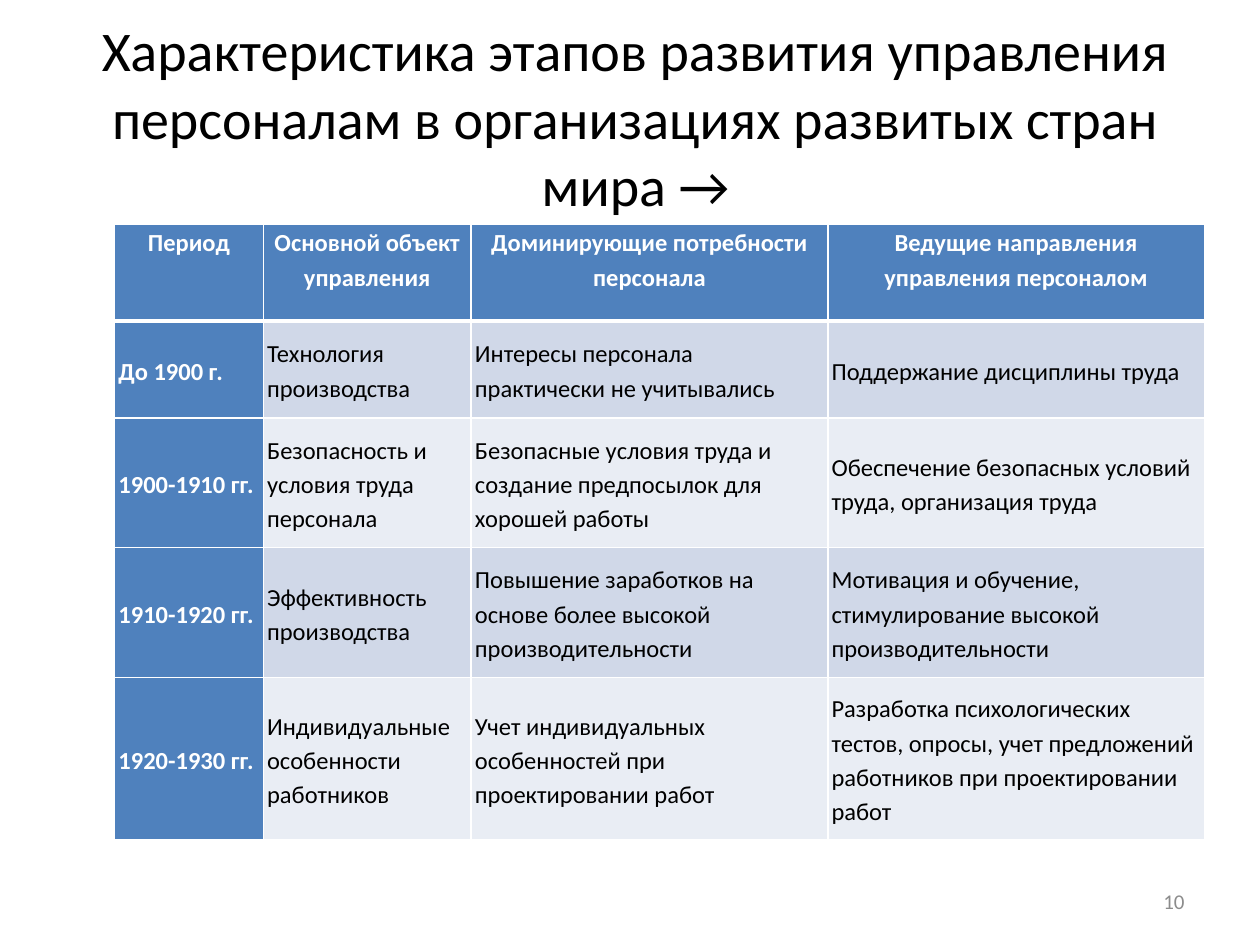
from pptx import Presentation
from pptx import util as u
from pptx.dml.color import RGBColor
from pptx.enum import text
from pptx.oxml import parse_xml
from pptx.oxml.ns import nsdecls

COLORS = {"head": "4F81BD", "odd": "D0D8E8", "even": "E9EDF4",
          "light": "FFFFFF", "dark": "000000", "number": "8C8C8C"}
W, H = u.Inches(10), u.Inches(7.5)
COLS = [1.18, 1.65, 2.83, 2.99]
ROWS = [0.77, 0.77, 1.03, 1.03, 1.29]
DATA = [
    ["Период", "Основной объект управления", "Доминирующие потребности персонала",
     "Ведущие направления управления персоналом"],
    ["До 1900 г.", "Технология производства",
     "Интересы персонала практически не учитывались", "Поддержание дисциплины труда"],
    ["1900-1910 гг.", "Безопасность и условия труда персонала",
     "Безопасные условия труда и создание предпосылок для хорошей работы",
     "Обеспечение безопасных условий труда, организация труда"],
    ["1910-1920 гг.", "Эффективность производства",
     "Повышение заработков на основе более высокой производительности",
     "Мотивация и обучение, стимулирование высокой производительности"],
    ["1920-1930 гг.", "Индивидуальные особенности работников",
     "Учет индивидуальных особенностей при проектировании работ",
     "Разработка психологических тестов, опросы, учет предложений работников "
     "при проектировании работ"],
]


def style(p, size, color, align, bold=False):
    p.alignment = align
    p.font.name = "Calibri"
    p.font.size = u.Pt(size)
    p.font.bold = bold
    p.font.color.rgb = RGBColor.from_string(COLORS[color])


def add_border(cell, side, width):
    cell._tc.get_or_add_tcPr().append(parse_xml(
        f'<a:ln{side} {nsdecls("a")} w="{u.Pt(width)}"><a:solidFill>'
        f'<a:srgbClr val="{COLORS["light"]}"/></a:solidFill></a:ln{side}>'))


prs = Presentation()
prs.slide_width, prs.slide_height = W, H
s = prs.slides.add_slide(prs.slide_layouts[5])

title = s.shapes.title
title.left, title.top = int(W * 0.028), int(H * 0.04)
title.width, title.height = int(W * 0.953), int(H * 0.167)
tf = title.text_frame
tf.text = "Характеристика этапов развития управления персоналам в организациях развитых стран мира →"
tf.word_wrap = True
tf.auto_size = text.MSO_AUTO_SIZE.NONE
tf.vertical_anchor = text.MSO_ANCHOR.MIDDLE
style(tf.paragraphs[0], 32, "dark", text.PP_ALIGN.CENTER)

table = s.shapes.add_table(len(ROWS), len(COLS), int(W * 0.091), int(H * 0.237),
                           u.Inches(sum(COLS)), u.Inches(sum(ROWS))).table
table.first_col = True
for column, width in zip(table.columns, COLS):
    column.width = u.Inches(width)
for row, height in zip(table.rows, ROWS):
    row.height = u.Inches(height)

for i, values in enumerate(DATA):
    for j, value in enumerate(values):
        cell = table.cell(i, j)
        header = i == 0
        label = header or j == 0
        cell.text = value
        cell.margin_left = cell.margin_right = u.Inches(0.03)
        cell.margin_top = cell.margin_bottom = 0
        cell.vertical_anchor = text.MSO_ANCHOR.TOP if header else text.MSO_ANCHOR.MIDDLE
        for side in "LRTB":
            thick = (i, side) in [(0, "B"), (1, "T")]
            add_border(cell, side, 3 if thick else 1)
        fill = "head" if label else "odd" if i % 2 else "even"
        cell.fill.solid()
        cell.fill.fore_color.rgb = RGBColor.from_string(COLORS[fill])
        p = cell.text_frame.paragraphs[0]
        p.line_spacing = 1.15
        style(p, 14, "light" if label else "dark",
              text.PP_ALIGN.CENTER if header else text.PP_ALIGN.LEFT, label)

number = s.shapes.add_textbox(int(W * 0.717), int(H * 0.927), int(W * 0.233), int(H * 0.053))
tf = number.text_frame
tf.text = "10"
tf.word_wrap = True
tf.vertical_anchor = text.MSO_ANCHOR.MIDDLE
style(tf.paragraphs[0], 12, "number", text.PP_ALIGN.RIGHT)

prs.save("out.pptx")
